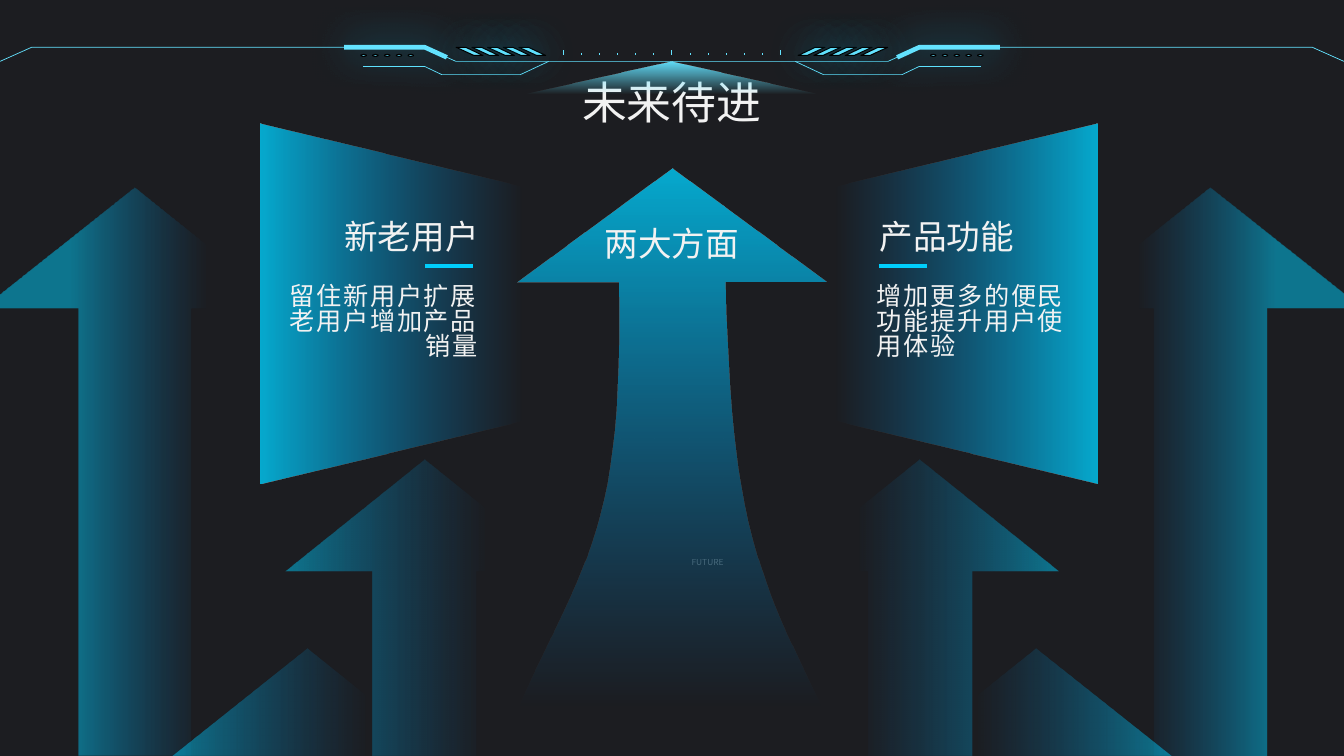
"""Build the dark neon slide with upward arrows and two side panels."""
from lxml.etree import SubElement
from pptx import Presentation
from pptx.dml.color import RGBColor
from pptx.enum.shapes import MSO_CONNECTOR, MSO_SHAPE
from pptx.enum.text import MSO_ANCHOR, MSO_AUTO_SIZE, PP_ALIGN
from pptx.oxml import parse_xml
from pptx.oxml.ns import nsdecls, qn
from pptx.util import Pt

NIGHT = RGBColor(0x1C, 0x1D, 0x21)
WHITE = RGBColor(0xF2, 0xF2, 0xF2)
BLACK = RGBColor(0, 0, 0)
NEON = RGBColor(0x64, 0xE3, 0xFF)
CYAN = RGBColor(0x00, 0xCE, 0xFC)
BLUE = RGBColor(0x02, 0x88, 0xDF)
FONT = "Noto Sans CJK SC"
WIDTH, HEIGHT = 960, 540
CENTER = WIDTH / 2

LEFT, MIDDLE, RIGHT = PP_ALIGN.LEFT, PP_ALIGN.CENTER, PP_ALIGN.RIGHT
TITLE = ("未来待进", (414, 53.3, 131.8, 38.9), 32, MIDDLE)
CENTER_LABEL = ("两大方面", (426.2, 159.1, 107.3, 28.8), 24, MIDDLE)
FUTURE = ("FUTURE", (65.5, 398.9, 879.8, 97.2), 6, MIDDLE)
PANEL_HEADINGS = {
    1: ("新老用户", (231.8, 154.1, 110.2, 28.8), 24, RIGHT),
    3: ("产品功能", (624.2, 154.1, 104.4, 28.8), 24, MIDDLE),
}
PANEL_BODIES = {
    2: ("留住新用户扩展老用户增加产品销量", (196.6, 198, 144.7, 65.5), 18, RIGHT),
    4: ("增加更多的便民功能提升用户使用体验", (626.4, 198, 144.7, 65.5), 18, LEFT),
}
PANELS = [(561.6, 270), (151.2, 90)]
UNDERLINES = [(627.8, 662.4), (303.8, 337.7)]
UNDERLINE_Y = 190.1

SIDE_ARROWS = [
    ([(656.6, 328.3), (756, 408.2), (694.1, 408.2), (694.1, 540),
      (619.9, 540), (619.9, 408.2), (557.3, 408.2)], 100),
    ([(864, 133.9), (960, 210.2), (960, 220.3), (904.3, 220.3), (904.3, 540),
      (823.7, 540), (823.7, 220.3), (756, 220.3)], 76),
    ([(740.2, 463), (836.6, 540), (644.4, 540)], 100),
]
ARROW_HEAD = [(517.7, 201.6), (590.4, 201.6), (480, 120.2), (369.4, 201.6)]
RIGHT_CURVE = [(517.7, 201.6), (522, 373.7), (540, 409), (587.5, 506.2)]
LEFT_CURVE = [(370.1, 504.7), (420.5, 394.6), (445, 375.8), (442.1, 201.6)]

RAILS = [
    ([(700.6, 47.5), (656.6, 47.5), (644.4, 53.3), (588.2, 53.3), (568.1, 43.9)], 0.5, False),
    ([(480, 43.9), (634.3, 43.9), (656.6, 33.8), (937.4, 33.8), (960, 43.9)], 0.5, False),
    ([(714.2, 33.8), (656.6, 33.8), (640.8, 41)], 3.25, True),
]
HATCH = [(6.5, 39.6), (19.1, 33.8), (12.2, 33.8), (0, 39.6)]
HATCH_START, HATCH_STEP = 570.2, 11.2
DOT_START, DOT_STEP, DOT_SIZE = 664.6, 8.42, (4, 1.4)
TICK_START, TICK_STEP, TICK_COUNT = 402.5, 12.9, 13


def place(box, bounds):
    for name, value in zip(("left", "top", "width", "height"), bounds):
        setattr(box, name, Pt(value))


def write(box, text, bounds, size, align, anchor=MSO_ANCHOR.MIDDLE, spacing=1.0, tracking=0):
    place(box, bounds)
    frame = box.text_frame
    frame_format = {"margin_left": 0, "margin_top": 0, "margin_right": 0, "margin_bottom": 0,
                    "word_wrap": True, "auto_size": MSO_AUTO_SIZE.NONE, "vertical_anchor": anchor}
    for name, value in frame_format.items():
        setattr(frame, name, value)
    para = frame.paragraphs[0]
    para_format = {"alignment": align, "line_spacing": spacing, "space_before": Pt(0)}
    for name, value in para_format.items():
        setattr(para, name, value)
    properties = para._p.get_or_add_pPr()
    properties.set("marL", "0")
    properties.set("indent", "0")
    SubElement(properties, qn("a:buNone"))
    span = para.add_run()
    span.text = text
    for name, value in {"name": FONT, "size": Pt(size), "bold": False}.items():
        setattr(span.font, name, value)
    span.font.color.rgb = WHITE
    run_properties = span._r.get_or_add_rPr()
    SubElement(run_properties, qn("a:ea")).set("typeface", FONT)
    if tracking:
        run_properties.set("spc", str(int(tracking * 100)))
    return span


def paint_gradient(shape, stops, angle):
    marks = "".join(
        f'<a:gs pos="{position * 1000}"><a:srgbClr val="{color}">'
        f'<a:alpha val="{alpha * 1000}"/></a:srgbClr></a:gs>'
        for position, color, alpha in stops)
    gradient = parse_xml(
        f'<a:gradFill {nsdecls("a")} rotWithShape="1"><a:gsLst>{marks}</a:gsLst>'
        f'<a:lin ang="{angle * 60000}" scaled="0"/></a:gradFill>')
    shape.fill.background()
    properties = shape.element.spPr
    properties.replace(properties.find(qn("a:noFill")), gradient)
    shape.line.fill.background()
    shape.shadow.inherit = False


def paint(shape, fill, line, weight, glow=False):
    if fill is None:
        shape.fill.background()
    else:
        shape.fill.solid()
        shape.fill.fore_color.rgb = fill
    shape.line.color.rgb = line
    shape.line.width = Pt(weight)
    shape.shadow.inherit = False
    if glow:
        shape.element.spPr.find(qn("a:effectLst")).append(parse_xml(
            f'<a:outerShdw {nsdecls("a")} blurRad="{Pt(30)}" dist="0" dir="0" algn="ctr" '
            f'rotWithShape="0"><a:srgbClr val="{CYAN}"><a:alpha val="90000"/>'
            f'</a:srgbClr></a:outerShdw>'))


def outline(shapes, points, close=True):
    corners = [(Pt(x), Pt(y)) for x, y in points]
    builder = shapes.build_freeform(*corners[0], scale=1.0)
    builder.add_line_segments(corners[1:], close=close)
    return builder.convert_to_shape()


def rule(shapes, start, end, color, weight):
    ends = [Pt(value) for value in (*start, *end)]
    line = shapes.add_connector(MSO_CONNECTOR.STRAIGHT, *ends)
    line.line.color.rgb = color
    line.line.width = Pt(weight)
    SubElement(line.element.spPr, qn("a:effectLst"))


def turn(points, side):
    return [(CENTER + side * (x - CENTER), y) for x, y in points]


def curve(controls, steps=24):
    weights = [((1 - t) ** 3, 3 * t * (1 - t) ** 2, 3 * t * t * (1 - t), t ** 3)
               for t in (step / steps for step in range(steps + 1))]
    return [tuple(sum(w * point[axis] for w, point in zip(row, controls)) for axis in (0, 1))
            for row in weights]


def add_arrows(shapes):
    glow = shapes.add_shape(MSO_SHAPE.ISOSCELES_TRIANGLE, 0, 0, 0, 0)
    place(glow, (375.1, 43.9, 209.5, 23))
    paint_gradient(glow, [(0, NEON, 100), (100, NEON, 0)], 90)
    stem = list(reversed(curve(LEFT_CURVE))) + list(reversed(curve(RIGHT_CURVE)))
    center_arrow = outline(shapes, stem + ARROW_HEAD[1:])
    paint_gradient(center_arrow, [(0, BLUE, 0), (100, CYAN, 80)], 270)
    for side, angle in ((1, 0), (-1, 180)):
        for points, last in SIDE_ARROWS:
            arrow = outline(shapes, turn(points, side))
            paint_gradient(arrow, [(28, BLUE, 0), (last, CYAN, 50)], angle)


def add_panels(shapes):
    for left, rotation in PANELS:
        panel = shapes.add_shape(MSO_SHAPE.TRAPEZOID, 0, 0, 0, 0)
        place(panel, (left, 123.1, 257, 187.9))
        panel.adjustments[0] = 0.241
        panel.rotation = rotation
        paint_gradient(panel, [(0, BLUE, 0), (100, CYAN, 80)], 90)
    for start, end in UNDERLINES:
        rule(shapes, (start, UNDERLINE_Y), (end, UNDERLINE_Y), CYAN, 2.5)


def add_header(shapes):
    for side in (1, -1):
        for points, weight, glow in RAILS:
            paint(outline(shapes, turn(points, side), False), None, NEON, weight, glow)
        for index in range(5):
            start = HATCH_START + index * HATCH_STEP
            hatch = [(start + x, y) for x, y in HATCH]
            paint(outline(shapes, turn(hatch, side)), NEON, BLACK, 0.75, True)
            middle = DOT_START + index * DOT_STEP + DOT_SIZE[0] / 2
            dot = shapes.add_shape(MSO_SHAPE.OVAL, 0, 0, 0, 0)
            place(dot, (CENTER + side * (middle - CENTER) - DOT_SIZE[0] / 2, 38.9, *DOT_SIZE))
            paint(dot, NEON, BLACK, 0.75)
    for index in range(TICK_COUNT):
        x = TICK_START + index * TICK_STEP
        rule(shapes, (x, 38.2 if index % 6 else 36), (x, 39.6), NEON, 0.5)


def main():
    deck = Presentation()
    deck.slide_width, deck.slide_height = Pt(WIDTH), Pt(HEIGHT)
    page = deck.slides.add_slide(deck.slide_layouts[4])
    page.background.fill.solid()
    page.background.fill.fore_color.rgb = NIGHT
    shapes = page.shapes
    holders = {box.placeholder_format.idx: box for box in page.placeholders}
    write(holders[0], *TITLE)
    future = write(shapes.add_textbox(0, 0, 0, 0), *FUTURE, MSO_ANCHOR.TOP, 0.9)
    tint = future._r.rPr.find(".//" + qn("a:srgbClr"))
    SubElement(tint, qn("a:alpha")).set("val", "30000")
    add_arrows(shapes)
    add_panels(shapes)
    for index, heading in PANEL_HEADINGS.items():
        write(holders[index], *heading)
        shapes.element.append(holders[index].element)
    for index, body in PANEL_BODIES.items():
        write(holders[index], *body, spacing=0.82, tracking=1.2)
        shapes.element.append(holders[index].element)
    write(shapes.add_textbox(0, 0, 0, 0), *CENTER_LABEL)
    add_header(shapes.add_group_shape().shapes)
    deck.save("out.pptx")


if __name__ == "__main__":
    main()
